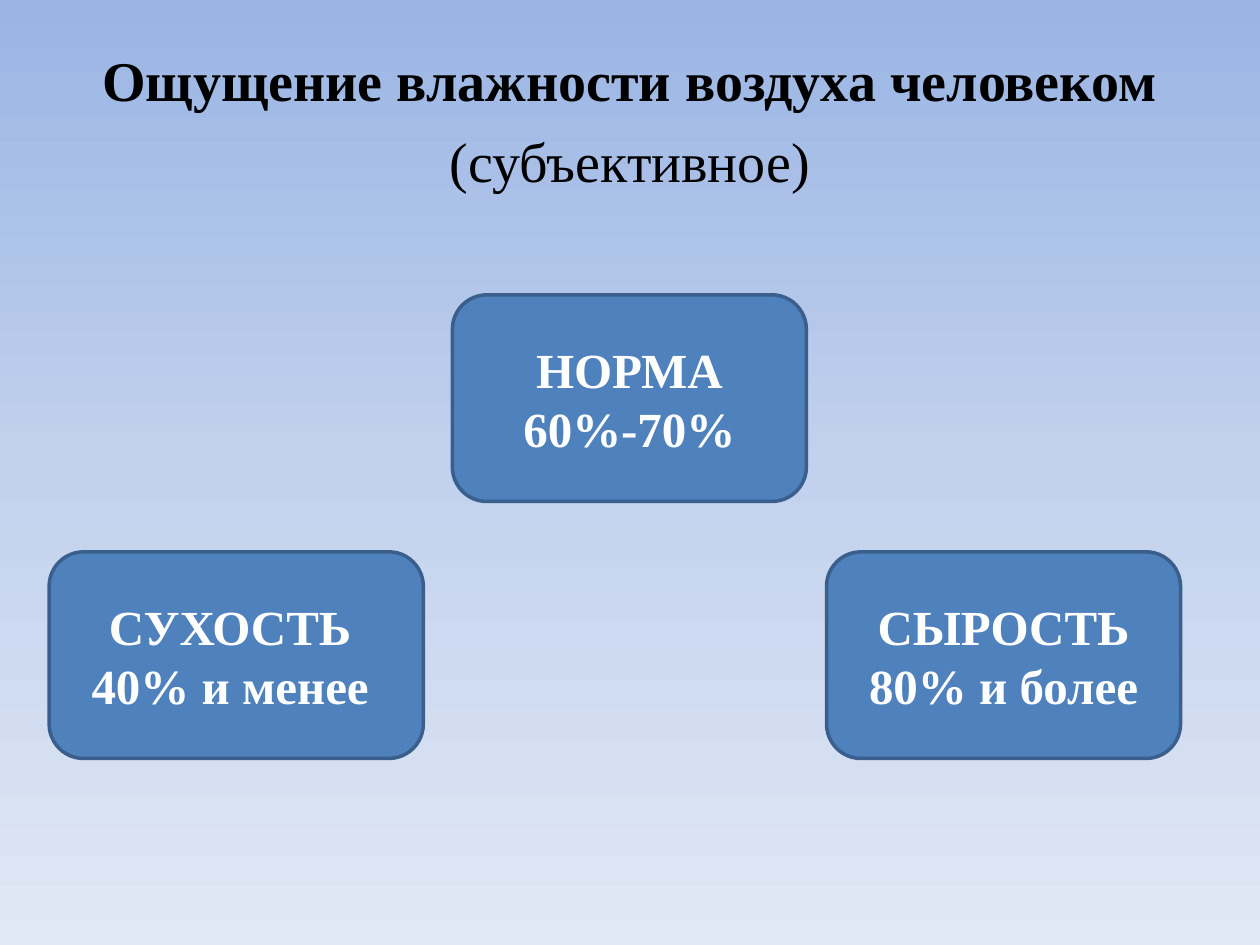
import copy

import pptx
import pptx.dml.color
import pptx.enum.shapes
import pptx.enum.text
import pptx.util
from pptx.util import Inches

RGBColor = pptx.dml.color.RGBColor
BLACK = RGBColor(0x00, 0x00, 0x00)
WHITE = RGBColor(0xFF, 0xFF, 0xFF)
BOX_FILL = RGBColor(0x4F, 0x81, 0xBD)
BOX_LINE = RGBColor(0x3A, 0x5F, 0x8C)
SKY_COLORS = (
    RGBColor(0x9A, 0xB5, 0xE4),
    RGBColor(0xC2, 0xD1, 0xED),
    RGBColor(0xE1, 0xE8, 0xF5),
)
FONT = "Times New Roman"
BOX_HEIGHT = 1.64
UPPER_ROW, LOWER_ROW = 2.34, 4.38


def paint_background(slide):
    """Fill the background with evenly spaced colours from top to bottom."""
    fill = slide.background.fill
    fill.gradient()
    fill.gradient_angle = 270
    stop_list = slide.element.xpath(".//a:gsLst")[0]
    stop_list.append(copy.deepcopy(stop_list[-1]))
    for index, (stop, color) in enumerate(zip(fill.gradient_stops, SKY_COLORS)):
        stop.color.rgb = color
        stop.position = index / (len(SKY_COLORS) - 1)


def format_paragraph(paragraph, size, color, bold):
    paragraph.alignment = pptx.enum.text.PP_ALIGN.CENTER
    for run in paragraph.runs:
        run.font.name = FONT
        run.font.size = pptx.util.Pt(size)
        run.font.bold = bold
        run.font.color.rgb = color


def add_heading(slide, left, top, width, height):
    shape = slide.shapes.add_textbox(
        Inches(left), Inches(top), Inches(width), Inches(height))
    text_frame = shape.text_frame
    text_frame.word_wrap = True
    text_frame.text = "Ощущение влажности воздуха человеком\n(субъективное)"
    for paragraph, bold in zip(text_frame.paragraphs, (True, False)):
        format_paragraph(paragraph, 32, BLACK, bold)
        paragraph.space_before = pptx.util.Pt(8)


def add_humidity_box(slide, left, top, width, height, text):
    shape = slide.shapes.add_shape(
        pptx.enum.shapes.MSO_SHAPE.ROUNDED_RECTANGLE,
        Inches(left), Inches(top), Inches(width), Inches(height))
    shape.shadow.inherit = False
    shape.fill.solid()
    shape.fill.fore_color.rgb = BOX_FILL
    shape.line.color.rgb = BOX_LINE
    shape.line.width = pptx.util.Pt(2)
    text_frame = shape.text_frame
    text_frame.word_wrap = True
    text_frame.vertical_anchor = pptx.enum.text.MSO_ANCHOR.MIDDLE
    text_frame.text = text
    for paragraph in text_frame.paragraphs:
        format_paragraph(paragraph, 28, WHITE, True)


def main():
    presentation = pptx.Presentation()
    presentation.slide_width = Inches(10)
    presentation.slide_height = Inches(7.5)
    slide = presentation.slides.add_slide(presentation.slide_layouts[6])

    paint_background(slide)
    add_heading(slide, 0.5, 0.31, 9, 6.8)
    for left, top, width, text in (
        (0.39, LOWER_ROW, 2.97, "СУХОСТЬ \n40% и менее "),
        (3.59, UPPER_ROW, 2.81, "НОРМА\n60%-70%"),
        (6.56, LOWER_ROW, 2.81, "СЫРОСТЬ\n80% и более"),
    ):
        add_humidity_box(slide, left, top, width, BOX_HEIGHT, text)

    presentation.save("out.pptx")


if __name__ == "__main__":
    main()
